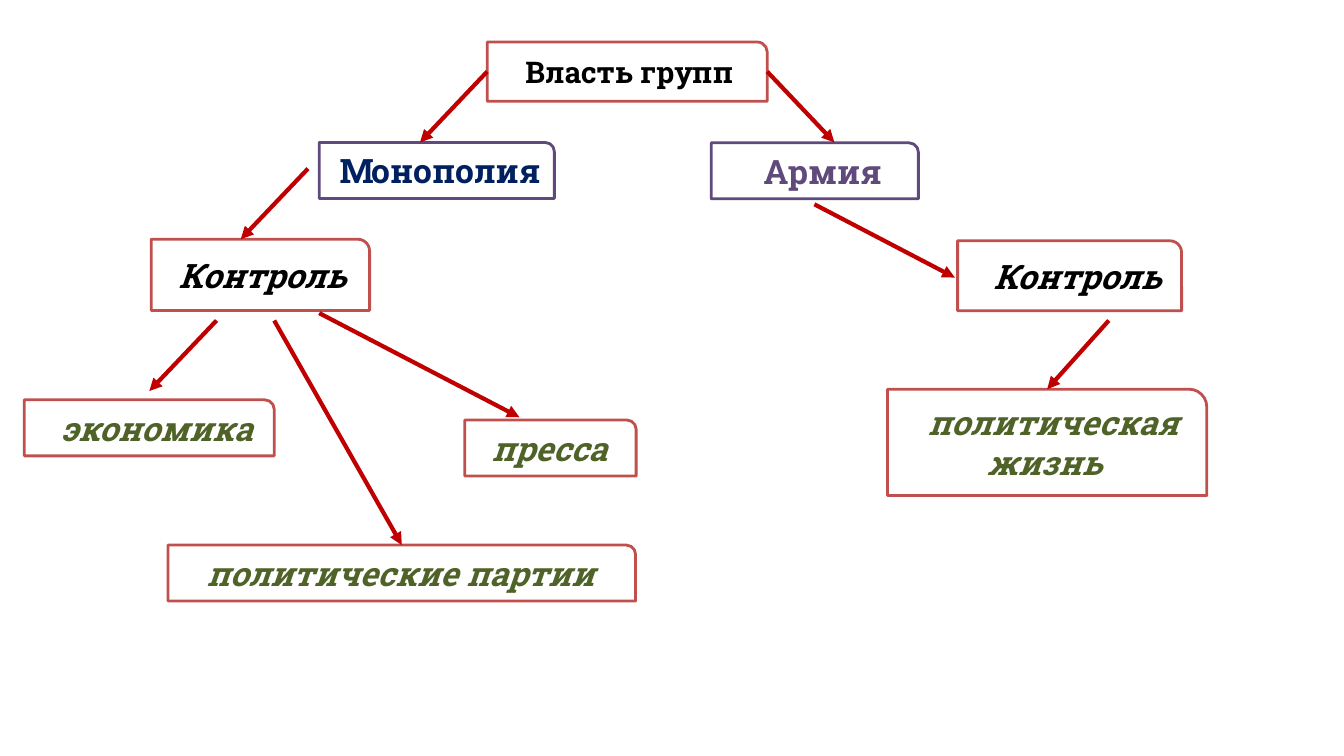
from pptx import Presentation
from pptx.dml.color import RGBColor
from pptx.enum.shapes import MSO_CONNECTOR, MSO_SHAPE
from pptx.enum.text import MSO_ANCHOR, PP_ALIGN
from pptx.oxml.ns import qn
from pptx.util import Pt
from lxml.etree import SubElement


def color(hex_string):
    return RGBColor.from_string(hex_string)


RED, PURPLE, ARROW_RED = "C0504D", "604A7B", "C00000"
BLACK, NAVY, GREEN = "000000", "002060", "4F6228"
TOP, LEFT, RIGHT = 0, 1, 3

presentation = Presentation()
presentation.slide_width, presentation.slide_height = Pt(1440), Pt(810)
slide = presentation.slides.add_slide(presentation.slide_layouts[6])

# key: text, (left, top, width, height), border, text color, size, italic, first-line indent
boxes = {
    "monopoly": ("Монополия", (342, 152.6, 252, 60), PURPLE, NAVY, 36, False, 10),
    "army": ("Армия", (762, 153, 222, 60), PURPLE, PURPLE, 36, False, 20),
    "groups": ("Власть групп", (522, 45, 300, 63.4), RED, BLACK, 32, False, 8),
    "monopoly control": ("Контроль", (162, 256.3, 234, 76.3), RED, BLACK, 36, True, 8),
    "army control": ("Контроль", (1026, 258, 240, 75), RED, BLACK, 36, True, 20),
    "political life": ("политическая жизнь", (951, 417, 342, 114), RED, GREEN, 36, True, 18),
    "press": ("пресса", (498, 450, 183.6, 60), RED, GREEN, 36, True, 0),
    "parties": ("политические партии", (180, 584, 501, 60), RED, GREEN, 36, True, 0),
    "economy": ("экономика", (26, 428.4, 267.8, 60), RED, GREEN, 36, True, 18),
}

shapes = {}
for key, (text, frame, border, text_color, size, italic, indent) in boxes.items():
    shape = slide.shapes.add_shape(MSO_SHAPE.ROUND_1_RECTANGLE, *map(Pt, frame))
    shape.shadow.inherit = False
    shape.fill.solid()
    shape.fill.fore_color.rgb = color("FFFFFF")
    shape.line.color.rgb = color(border)
    shape.line.width = Pt(3)
    shape.text_frame.vertical_anchor = MSO_ANCHOR.MIDDLE
    paragraph = shape.text_frame.paragraphs[0]
    paragraph.alignment = PP_ALIGN.CENTER
    paragraph._p.get_or_add_pPr().set("indent", str(Pt(indent)))
    run = paragraph.add_run()
    run.text = text
    font_format = {"name": "Roboto Slab", "size": Pt(size), "bold": True, "italic": italic}
    for attribute, value in font_format.items():
        setattr(run.font, attribute, value)
    run.font.color.rgb = color(text_color)
    shapes[key] = shape

# start x, y, end x, y, joined start (box, side), joined end (box, side)
arrows = [
    (522, 76.3, 450, 152.6, ("groups", LEFT), None),
    (822, 76.3, 894, 152.6, ("groups", RIGHT), None),
    (330, 180.7, 258, 256.3, None, None),
    (232, 343.4, 160, 419, None, None),
    (293.8, 343.4, 430.6, 584, None, ("parties", TOP)),
    (342, 335.5, 556.6, 447.1, None, None),
    (872.6, 218.9, 1023.1, 297.4, None, None),
    (1188, 343.4, 1122, 417, None, ("political life", TOP)),
]

for *ends, start_joint, end_joint in arrows:
    arrow = slide.shapes.add_connector(MSO_CONNECTOR.STRAIGHT, *map(Pt, ends))
    if start_joint:
        arrow.begin_connect(shapes[start_joint[0]], start_joint[1])
    if end_joint:
        arrow.end_connect(shapes[end_joint[0]], end_joint[1])
    arrow.line.color.rgb = color(ARROW_RED)
    arrow.line.width = Pt(4.5)
    SubElement(arrow.line._get_or_add_ln(), qn("a:tailEnd"), type="triangle")
    SubElement(arrow._element.spPr, qn("a:effectLst"))

presentation.save("out.pptx")
